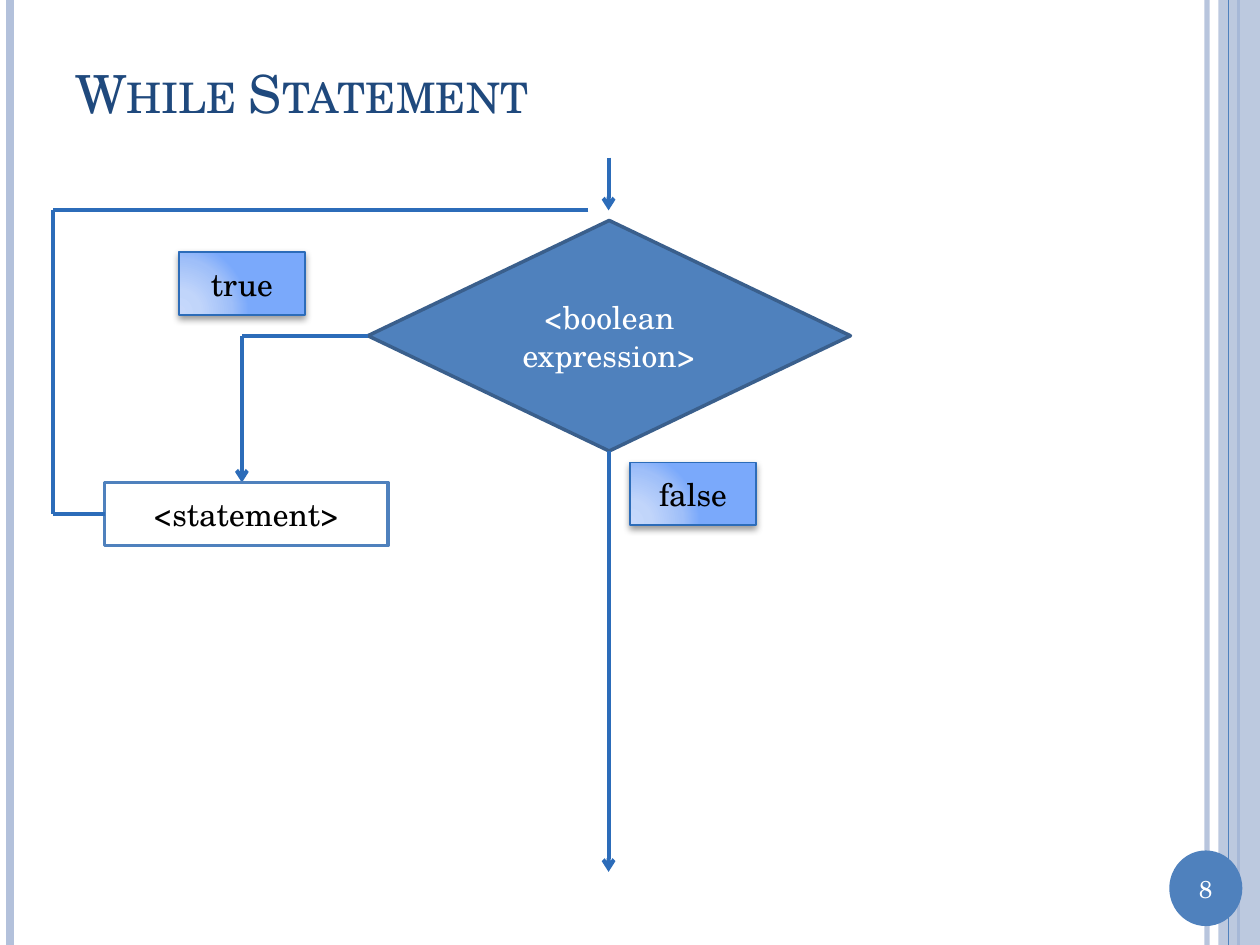
import dataclasses
import pptx
import pptx.dml.color
import pptx.enum.shapes
import pptx.enum.text
import pptx.oxml
import pptx.oxml.ns
import pptx.util

Inches = pptx.util.Inches
SHAPE = pptx.enum.shapes.MSO_SHAPE
ALIGN = pptx.enum.text.PP_ALIGN
MIDDLE = pptx.enum.text.MSO_ANCHOR.MIDDLE


@dataclasses.dataclass
class Theme:
    font: str = "TeX Gyre Schola"
    white: str = "FFFFFF"
    black: str = "000000"
    navy: str = "1F497D"
    blue: str = "4F81BD"
    edge: str = "3A5F8C"
    flow: str = "2C6CB9"
    pale: str = "B3C1DB"
    glow: tuple = ((0, "C7D8FB"), (30, "C1D5FA"), (75, "9FBFF9"), (100, "7AA9FB"))
    title: int = 30
    body: int = 18
    page: int = 14


def rgb(code):
    return pptx.dml.color.RGBColor.from_string(code)


def node(tag, attrs="", inner=""):
    """Make one drawing element."""
    names = pptx.oxml.ns.nsdecls("a")
    return pptx.oxml.parse_xml(f"<a:{tag} {names} {attrs}>{inner}</a:{tag}>")


def fade(color, alpha):
    """Set the opacity, in percent, of a solid fill inside an element."""
    tag = pptx.oxml.ns.qn("a:srgbClr")
    next(color.iter(tag)).append(node("alpha", f'val="{alpha * 1000}"'))


class Deck:
    def __init__(self, theme):
        self.theme = theme
        self.file = pptx.Presentation()
        self.file.slide_width, self.file.slide_height = Inches(10), Inches(7.5)
        self.slide = self.file.slides.add_slide(self.file.slide_layouts[6])

    def letter(self, shape, text, size, color, align=ALIGN.CENTER, caps=False):
        frame = shape.text_frame
        for key, value in {"word_wrap": True, "vertical_anchor": MIDDLE}.items():
            setattr(frame, key, value)
        para = frame.paragraphs[0]
        para.alignment = align
        run = para.add_run()
        run.text = text
        form = {"name": self.theme.font, "size": pptx.util.Pt(size)}
        for key, value in form.items():
            setattr(run.font, key, value)
        run.font.color.rgb = rgb(color)
        if caps:
            run.font._element.set("cap", "small")

    def text(self, box, *args, **form):
        shape = self.slide.shapes.add_textbox(*map(Inches, box))
        self.letter(shape, *args, **form)

    def shape(self, kind, box, fill, edge=None, width=2):
        shape = self.slide.shapes.add_shape(kind, *map(Inches, box))
        shape.shadow.inherit = False
        shape.fill.solid()
        shape.fill.fore_color.rgb = rgb(fill)
        if edge:
            shape.line.color.rgb = rgb(edge)
            shape.line.width = pptx.util.Pt(width)
        else:
            shape.line.fill.background()
        return shape

    def label(self, left, top, text):
        """Glowing box with a soft shadow below."""
        look = self.theme
        shape = self.shape(SHAPE.RECTANGLE, (left, top, 1, 0.5), look.white, look.flow, 1)
        props = shape.element.spPr
        stops = "".join(
            f'<a:gs pos="{pos * 1000}"><a:srgbClr val="{code}"/></a:gs>'
            for pos, code in look.glow
        )
        rect = '<a:fillToRect l="5000" t="100000" r="120000" b="10000"/>'
        glow = node("gradFill", 'rotWithShape="1"',
                    f'<a:gsLst>{stops}</a:gsLst><a:path path="circle">{rect}</a:path>')
        props.replace(props.find(pptx.oxml.ns.qn("a:solidFill")), glow)
        tint = f'<a:srgbClr val="{look.black}"><a:alpha val="40000"/></a:srgbClr>'
        props.find(pptx.oxml.ns.qn("a:effectLst")).append(node(
            "outerShdw",
            'blurRad="50800" dist="25400" dir="5400000" rotWithShape="0"', tint))
        self.letter(shape, text, look.body, look.black)

    def line(self, start, end, color=None, width=2.25, arrow=False, alpha=None):
        kind = pptx.enum.shapes.MSO_CONNECTOR.STRAIGHT
        line = self.slide.shapes.add_connector(kind, *map(Inches, start + end))
        line.line.color.rgb = rgb(color or self.theme.flow)
        line.line.width = pptx.util.Pt(width)
        props = line.element.spPr
        props.append(node("effectLst"))
        stroke = props.find(pptx.oxml.ns.qn("a:ln"))
        if arrow:
            stroke.append(node("tailEnd", 'type="arrow"'))
        if alpha:
            fade(stroke, alpha)

    def rail(self, x, color, width, alpha=None):
        self.line((x, 0), (x, 7.5), color, width, alpha=alpha)


def main():
    look = Theme()
    deck = Deck(look)

    # Side rails and page number
    deck.rail(9.58, look.pale, 3, 93)
    deck.rail(0.08, look.pale, 4.5)
    deck.rail(9.83, look.blue, 1.5)
    band = deck.shape(SHAPE.RECTANGLE, (9.67, 0, 0.33, 7.5), look.pale)
    fade(band.element.spPr, 87)
    deck.rail(9.75, look.blue, 0.75)
    deck.shape(SHAPE.OVAL, (9.28, 6.75, 0.58, 0.6), look.blue)
    deck.text((9.28, 6.88, 0.58, 0.34), "8", look.page, look.white)

    # Title
    deck.text((0.5, 0.3, 8.67, 0.87), "While Statement", look.title, look.navy,
              align=ALIGN.LEFT, caps=True)

    # Flow positions
    mid, drop, loop = 4.83, 1.92, 0.42
    join, test, back = 1.67, 2.67, 4.08

    # Condition and its two exits
    choice = deck.shape(SHAPE.FLOWCHART_DECISION, (2.92, 1.75, 3.83, 1.83),
                        look.blue, look.edge)
    deck.letter(choice, "<boolean expression>", look.body, look.white)
    deck.line((2.92, test), (drop, test))
    deck.line((drop, test), (drop, 3.83), arrow=True)
    deck.line((mid, 3.58), (mid, 6.92), arrow=True)

    # Loop body
    step = deck.shape(SHAPE.RECTANGLE, (0.83, 3.83, 2.25, 0.5), look.white, look.blue)
    deck.letter(step, "<statement>", look.body, look.black)

    # Way back to the condition
    deck.line((loop, join), (loop, back))
    deck.line((0.83, back), (loop, back))
    deck.label(1.42, 2, "true")
    deck.label(5, 3.67, "false")
    deck.line((4.67, join), (loop, join))

    # Entry
    deck.line((mid, 1.25), (mid, join), arrow=True)

    deck.file.save("out.pptx")


if __name__ == "__main__":
    main()
